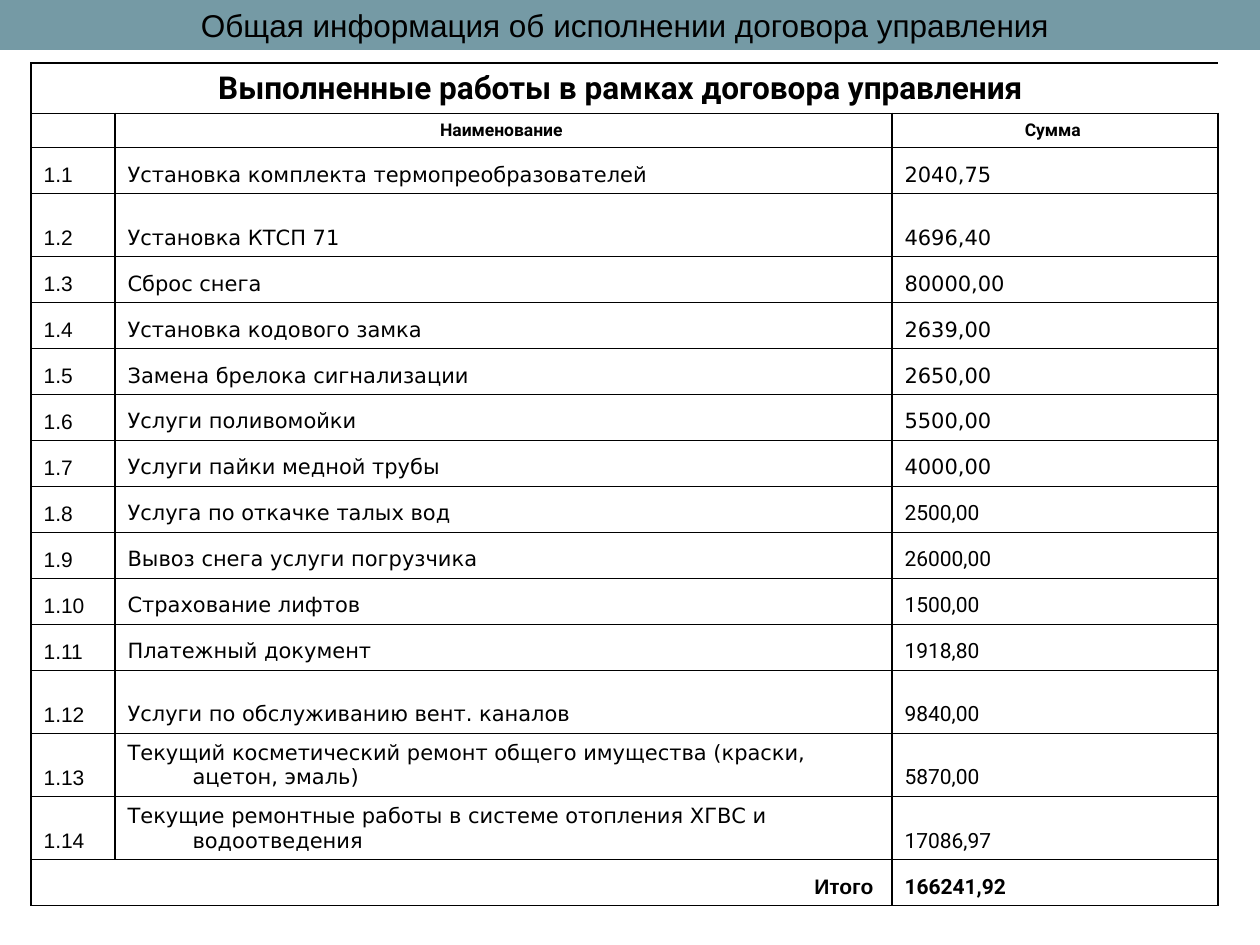
from dataclasses import dataclass

from lxml.etree import SubElement
from pptx import Presentation
from pptx.dml.color import RGBColor
from pptx.enum.shapes import MSO_SHAPE as Shape
from pptx.enum.text import MSO_ANCHOR as Anchor, MSO_AUTO_SIZE as AutoSize, PP_ALIGN as Align
from pptx.oxml.ns import qn
from pptx.util import Emu, Pt

PX_PER_INCH = 126


@dataclass(frozen=True)
class Theme:
    banner: str = "759AA5"
    ink: str = "000000"
    label_font: str = "Arial"
    work_font: str = "DejaVu Sans"
    heading_font: str = "Roboto"
    title_size: int = 18
    header_size: int = 10
    body_size: int = 12
    border_width: int = 1


THEME = Theme()
COLUMN_WIDTHS = (84, 777, 326)
HEADING_HEIGHT, HEADER_HEIGHT, ROW_HEIGHT, TALL_HEIGHT = 50, 34, 46, 63
HANGING_INDENT = 65
TALL_WORKS = (2, 12, 13, 14)
FIRST_ROBOTO_SUM = 8

WORKS = (
    ("Установка комплекта термопреобразователей", "2040,75"),
    ("Установка КТСП 71", "4696,40"),
    ("Сброс снега", "80000,00"),
    ("Установка кодового замка", "2639,00"),
    ("Замена брелока сигнализации", "2650,00"),
    ("Услуги поливомойки", "5500,00"),
    ("Услуги пайки медной трубы", "4000,00"),
    ("Услуга по откачке талых вод", "2500,00"),
    ("Вывоз снега услуги погрузчика", "26000,00"),
    ("Страхование лифтов", "1500,00"),
    ("Платежный документ", "1918,80"),
    ("Услуги по обслуживанию вент. каналов", "9840,00"),
    ("Текущий косметический ремонт общего имущества (краски, ацетон, эмаль)", "5870,00"),
    ("Текущие ремонтные работы в системе отопления ХГВС и водоотведения", "17086,97"),
)


def px(length):
    return Emu(round(length * 914400 / PX_PER_INCH))


def write(frame, text, *, font, size=THEME.body_size, bold=False, align=Align.LEFT, hanging=False):
    paragraph = frame.paragraphs[0]
    paragraph.alignment = align
    if hanging:
        properties = paragraph._p.get_or_add_pPr()
        properties.set("marL", str(px(HANGING_INDENT)))
        properties.set("indent", str(-px(HANGING_INDENT)))
    run = paragraph.add_run()
    run.text = text
    run.font.name = font
    run.font.size = Pt(size)
    run.font.bold = bold
    run.font.color.rgb = RGBColor.from_string(THEME.ink)


def add_banner(slide):
    banner = slide.shapes.add_shape(Shape.RECTANGLE, 0, 0, px(1260), px(50))
    banner.shadow.inherit = False
    banner.fill.solid()
    banner.fill.fore_color.rgb = RGBColor.from_string(THEME.banner)
    banner.line.fill.background()

    title = slide.shapes.add_textbox(px(-266), 0, px(1782), px(50)).text_frame
    title.word_wrap = True
    title.auto_size = AutoSize.SHAPE_TO_FIT_TEXT
    write(title, "Общая информация об исполнении договора управления",
          font=THEME.label_font, size=THEME.title_size, align=Align.CENTER)


def style_cell(cell, sides):
    cell.vertical_anchor = Anchor.BOTTOM
    properties = cell._tc.get_or_add_tcPr()
    for side in "LRTB":
        border = SubElement(properties, qn(f"a:ln{side}"), w=str(Pt(THEME.border_width)))
        if side in sides:
            paint = SubElement(border, qn("a:solidFill"))
            SubElement(paint, qn("a:srgbClr"), val=THEME.ink)
        else:
            SubElement(border, qn("a:noFill"))
    cell.fill.background()
    if not cell.text_frame.text:
        SubElement(cell.text_frame.paragraphs[0]._p, qn("a:endParaRPr"),
                   sz=str(THEME.header_size * 100))


def fill_headings(table):
    heading = table.cell(0, 0)
    heading.merge(table.cell(0, 2))
    style = dict(font=THEME.heading_font, bold=True, align=Align.CENTER, hanging=True)
    write(heading.text_frame, "Выполненные работы в рамках договора управления ",
          size=THEME.title_size, **style)
    for column, caption in enumerate(("Наименование ", "Сумма "), 1):
        write(table.cell(1, column).text_frame, caption, size=THEME.header_size, **style)


def fill_works(table):
    for number, (work, amount) in enumerate(WORKS, 1):
        number_cell, work_cell, amount_cell = table.rows[number + 1].cells
        amount_font = THEME.heading_font if number >= FIRST_ROBOTO_SUM else THEME.work_font
        write(number_cell.text_frame, f"1.{number}", font=THEME.label_font)
        write(work_cell.text_frame, work, font=THEME.work_font, hanging=True)
        write(amount_cell.text_frame, amount, font=amount_font, hanging=True)


def fill_total(table):
    last = len(table.rows) - 1
    label = table.cell(last, 0)
    label.merge(table.cell(last, 1))
    write(label.text_frame, "Итого ", font=THEME.label_font, bold=True, align=Align.RIGHT)
    write(table.cell(last, 2).text_frame, "166241,92",
          font=THEME.heading_font, bold=True, hanging=True)


def add_works_table(slide):
    heights = [HEADING_HEIGHT, HEADER_HEIGHT]
    heights += [TALL_HEIGHT if number in TALL_WORKS else ROW_HEIGHT
                for number in range(1, len(WORKS) + 1)]
    heights.append(ROW_HEIGHT)
    table = slide.shapes.add_table(len(heights), len(COLUMN_WIDTHS), px(31), px(63),
                                   px(sum(COLUMN_WIDTHS)), px(sum(heights))).table
    table.first_row = table.horz_banding = False
    for column, width in zip(table.columns, COLUMN_WIDTHS):
        column.width = px(width)
    for row, height in zip(table.rows, heights):
        row.height = px(height)

    fill_headings(table)
    fill_works(table)
    fill_total(table)
    for index, row in enumerate(table.rows):
        for cell in row.cells:
            style_cell(cell, "LRTB" if index else "LTB")


def main():
    presentation = Presentation()
    presentation.slide_width, presentation.slide_height = px(1260), px(945)
    slide = presentation.slides.add_slide(presentation.slide_layouts[6])
    add_banner(slide)
    add_works_table(slide)
    presentation.save("out.pptx")


if __name__ == "__main__":
    main()
